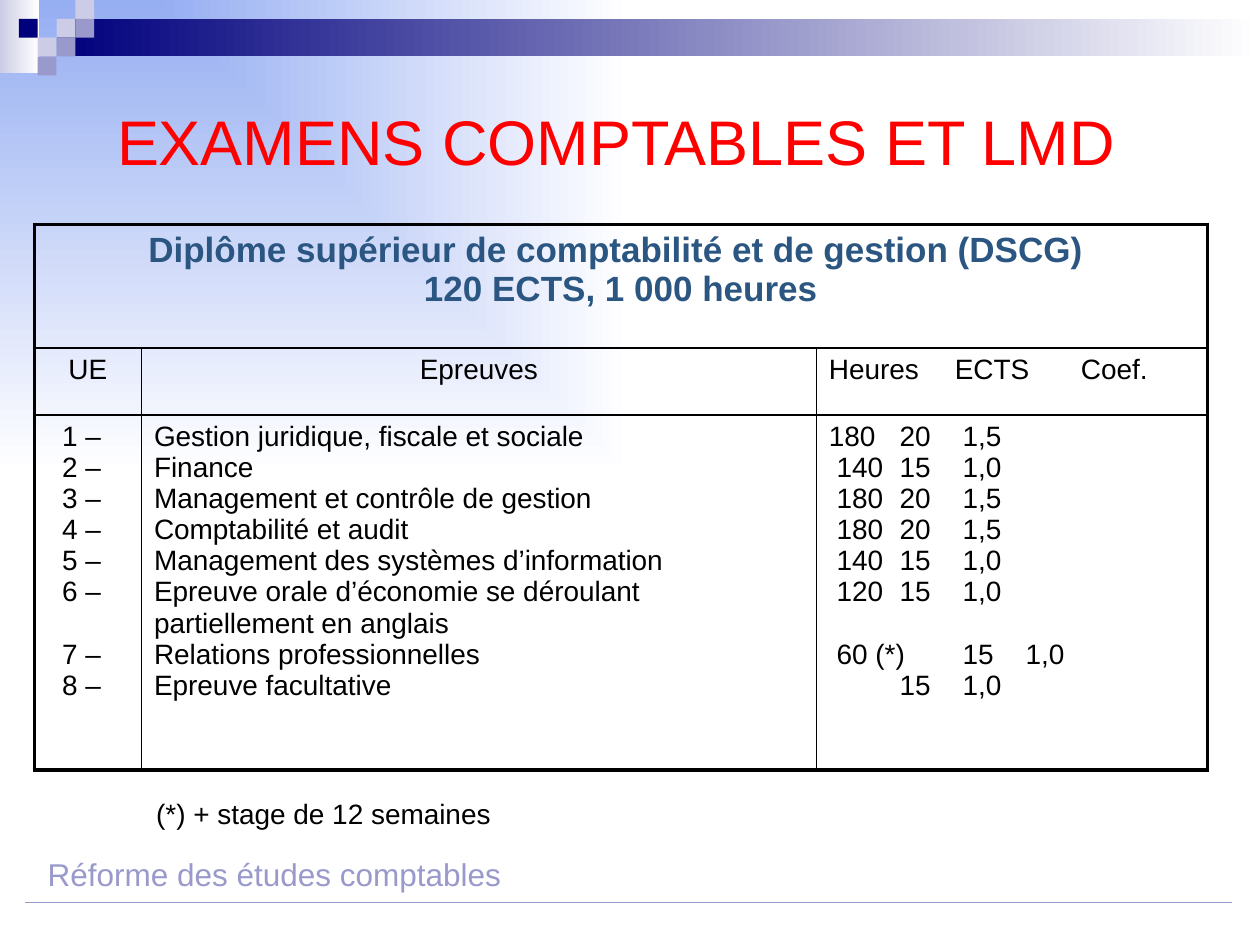
from collections import namedtuple

from lxml.etree import SubElement
from pptx import Presentation
from pptx.dml.color import RGBColor
from pptx.enum.shapes import MSO_CONNECTOR, MSO_SHAPE
from pptx.enum.text import MSO_ANCHOR, PP_ALIGN
from pptx.oxml.ns import qn
from pptx.util import Cm, Pt

Box = namedtuple("Box", "left top width height")

BLACK, RED, BLUE = "000000", "FF0000", "2B5681"
NAVY, LILAC, PALE, WHITE = "00007D", "9999CC", "CCCCE6", "FFFFFF"
SKY = "96AEF2"
LINE_HEIGHT = 17.9

EXAMS = [
    ("1 –", "Gestion juridique, fiscale et sociale", "180\t 20\t 1,5"),
    ("2 –", "Finance", " 140\t 15\t 1,0"),
    ("3 –", "Management et contrôle de gestion", " 180\t 20\t 1,5"),
    ("4 –", "Comptabilité et audit", " 180\t 20\t 1,5"),
    ("5 –", "Management des systèmes d’information", " 140\t 15\t 1,0"),
    ("6 –", "Epreuve orale d’économie se déroulant partiellement en anglais",
     " 120\t 15\t 1,0"),
    ("7 –", "Relations professionnelles", " 60 (*)\t 15\t 1,0"),
    ("8 –", "Epreuve facultative", "\t 15\t 1,0"),
]
AFTER_WRAPPED_EXAM = 6


def color(value):
    return RGBColor.from_string(value)


def set_gradient(fill, start, end):
    fill.gradient()
    fill.gradient_angle = 0
    for stop, value in zip(fill.gradient_stops, (start, end)):
        stop.color.rgb = color(value)


def write_lines(frame, lines, size, ink, bold=False, align=PP_ALIGN.LEFT):
    for index, line in enumerate(lines):
        paragraph = frame.paragraphs[0] if index == 0 else frame.add_paragraph()
        paragraph.alignment = align
        run = paragraph.add_run()
        run.text = line
        run.font.name = "Arial"
        run.font.size = Pt(size)
        run.font.bold = bold
        run.font.color.rgb = color(ink)


def add_label(slide, box, text, size, ink, anchor=MSO_ANCHOR.TOP, wrap=True):
    label = slide.shapes.add_textbox(*map(Cm, box))
    label.text_frame.word_wrap = wrap
    label.text_frame.vertical_anchor = anchor
    write_lines(label.text_frame, [text], size, ink)


def add_block(slide, box):
    block = slide.shapes.add_shape(MSO_SHAPE.RECTANGLE, *map(Cm, box))
    block.shadow.inherit = False
    block.line.fill.background()
    return block.fill


def paint_background(slide):
    set_gradient(slide.background.fill, SKY, WHITE)
    gradient = slide.element.find(".//" + qn("a:gradFill"))
    gradient.remove(gradient.find(qn("a:lin")))
    focus = SubElement(gradient, qn("a:path"), path="rect")
    SubElement(focus, qn("a:fillToRect"), r="100000", b="100000")


def add_header(slide, box):
    step = box.height / 4
    set_gradient(add_block(slide, Box(box.left, box.top, 0.79, 1.47)), PALE, WHITE)
    band_left = box.left + 3 * step
    band = Box(band_left, box.top + step, box.width - 3 * step, 2 * step)
    set_gradient(add_block(slide, band), NAVY, WHITE)
    tiles = [(3, 1, PALE), (4, 0, PALE), (4, 1, LILAC), (2, 2, PALE),
             (1, 1, NAVY), (3, 2, LILAC), (2, 3, LILAC)]
    for column, row, tint in tiles:
        tile = add_block(slide, Box(box.left + column * step,
                                    box.top + row * step, step, step))
        tile.solid()
        tile.fore_color.rgb = color(tint)


def draw_borders(cell, outer_edges):
    properties = cell._tc.get_or_add_tcPr()
    for side, outer in zip("LRTB", outer_edges):
        border = SubElement(properties, qn("a:ln" + side),
                            w=str(Pt(2.25 if outer else 1)))
        fill = SubElement(border, qn("a:solidFill"))
        SubElement(fill, qn("a:srgbClr"), val=BLACK)


def add_exam_table(slide, box):
    column_shares = (0.85, 5.35, 3.1)
    row_shares = (0.98, 0.53, 2.81)
    rows, columns = len(row_shares), len(column_shares)
    table = slide.shapes.add_table(rows, columns, *map(Cm, box)).table
    table.first_row = table.horz_banding = False
    for column, share in zip(table.columns, column_shares):
        column.width = Cm(box.width * share / sum(column_shares))
    for row, share in zip(table.rows, row_shares):
        row.height = Cm(box.height * share / sum(row_shares))
    table.cell(0, 0).merge(table.cell(0, columns - 1))

    for row in range(rows):
        for column in range(columns):
            cell = table.cell(row, column)
            last_column = column + cell.span_width == columns
            draw_borders(cell, (column == 0, last_column, row == 0, row == rows - 1))
            cell.fill.background()

    write_lines(table.cell(0, 0).text_frame,
                ["Diplôme supérieur de comptabilité et de gestion (DSCG) ",
                 "120 ECTS, 1 000 heures"], 20, BLUE, True, PP_ALIGN.CENTER)
    headings = [("UE", PP_ALIGN.CENTER), ("Epreuves", PP_ALIGN.CENTER),
                ("Heures\tECTS\tCoef.", PP_ALIGN.LEFT)]
    for column, (heading, align) in enumerate(headings):
        write_lines(table.cell(1, column).text_frame, [heading], 16, BLACK, align=align)
    for column, entries in enumerate(zip(*EXAMS)):
        frame = table.cell(2, column).text_frame
        write_lines(frame, entries, 16, BLACK)
        if column != 1:
            frame.paragraphs[AFTER_WRAPPED_EXAM].space_before = Pt(LINE_HEIGHT)
    for paragraph in table.cell(2, 0).text_frame.paragraphs:
        paragraph._p.get_or_add_pPr().set("marL", str(Cm(0.31)))


def add_footer(slide, box):
    add_label(slide, Box(box.left + 0.2, box.top, box.width - 0.48, 1.02),
              "Réforme des études comptables", 18, LILAC)
    bottom = Cm(box.top + box.height)
    rule = slide.shapes.add_connector(MSO_CONNECTOR.STRAIGHT, Cm(box.left), bottom,
                                      Cm(box.left + box.width), bottom)
    rule.line.color.rgb = color(LILAC)
    rule.line.width = Pt(0.75)
    SubElement(rule._element.spPr, qn("a:effectLst"))


def main():
    presentation = Presentation()
    presentation.slide_width = Cm(25.4)
    presentation.slide_height = Cm(19.05)
    slide = presentation.slides.add_slide(presentation.slide_layouts[6])
    paint_background(slide)
    add_header(slide, Box(0, 0, 25.4, 1.52))
    add_label(slide, Box(2.11, 1.93, 20.9, 1.8), "EXAMENS COMPTABLES ET LMD",
              36, RED, MSO_ANCHOR.MIDDLE)
    add_label(slide, Box(2.9, 15.93, 7.29, 0.94), "(*) + stage de 12 semaines",
              16, BLACK, wrap=False)
    add_exam_table(slide, Box(0.69, 4.52, 23.65, 11))
    add_footer(slide, Box(0.51, 17.12, 24.33, 1.07))
    presentation.save("out.pptx")


if __name__ == "__main__":
    main()
